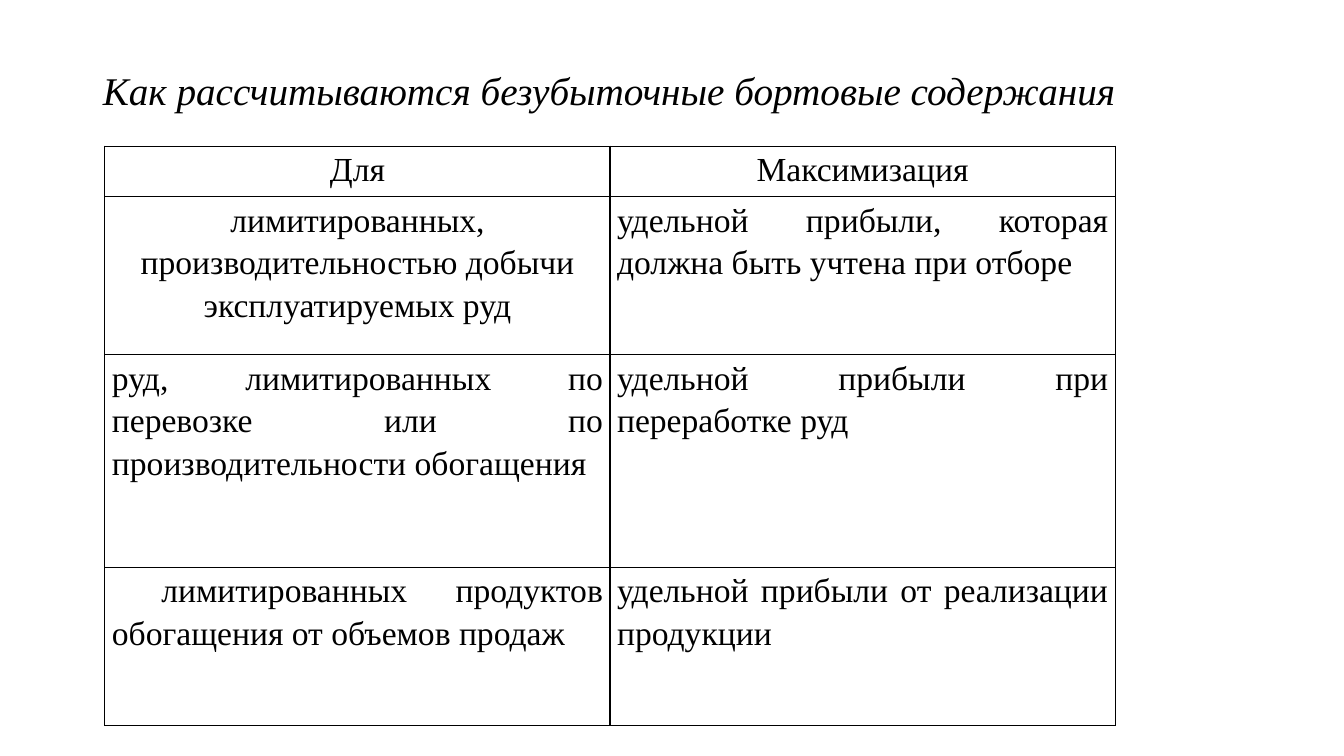
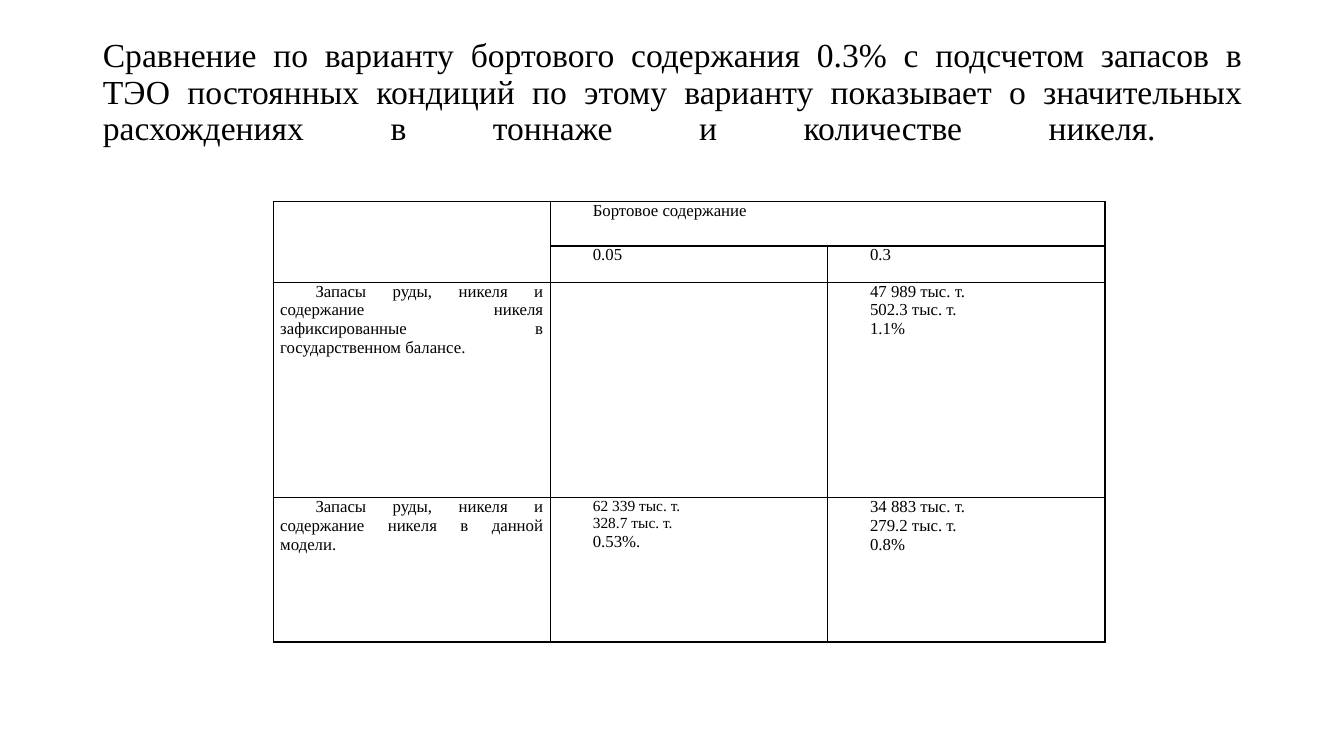
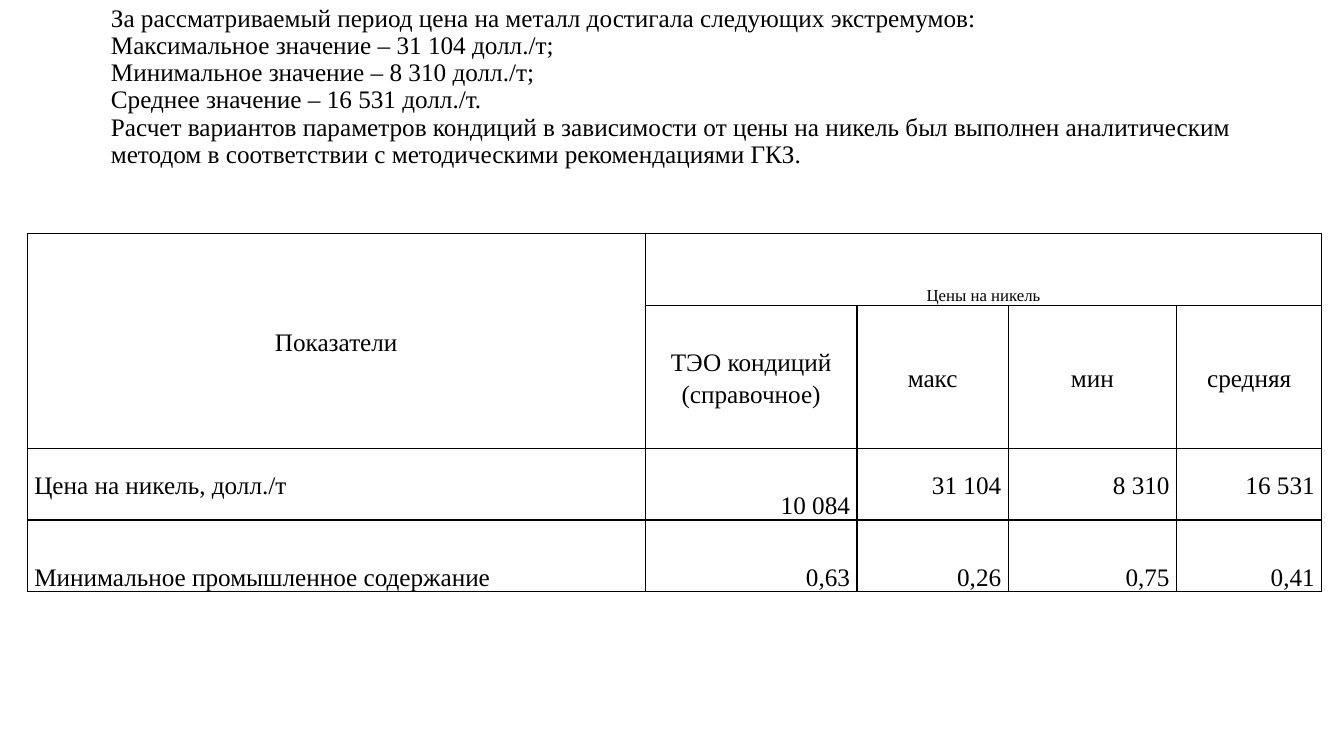
import copy
import dataclasses

import lxml.etree
import pptx
import pptx.dml.color
import pptx.enum.text
import pptx.oxml.ns
import pptx.util

Inches = pptx.util.Inches
Pt = pptx.util.Pt
Align = pptx.enum.text.PP_ALIGN
Anchor = pptx.enum.text.MSO_ANCHOR
qn = pptx.oxml.ns.qn


@dataclasses.dataclass(frozen=True)
class Theme:
    font: str = "Times New Roman"
    ink: str = "000000"
    border: float = 1
    cell_inset: float = 0.07
    title_inset: float = 0.05
    title_spacing: float = 0.9
    large: int = 28
    medium: int = 24
    normal: int = 18
    small: int = 12
    tiny: int = 11


@dataclasses.dataclass(frozen=True)
class Box:
    left: float
    top: float
    width: float
    height: float

    def lengths(self):
        return [Inches(value) for value in dataclasses.astuple(self)]


@dataclasses.dataclass(frozen=True)
class CellStyle:
    size: int
    align: Align = Align.JUSTIFY
    anchor: Anchor = Anchor.TOP
    line_spacing: float = 1.0
    space_after: float = 0
    indent: float = 0


THEME = Theme()
TITLE_BOX = Box(0.92, 0.4, 11.5, 1.45)


def format_runs(para, size, italic=False):
    for span in para.runs:
        span.font.name = THEME.font
        span.font.size = Pt(size)
        span.font.italic = italic
        span.font.color.rgb = pptx.dml.color.RGBColor.from_string(THEME.ink)


def format_breaks(para, size):
    """Give line breaks and the paragraph end the type size of the runs."""
    for line_break in para._p.findall(qn("a:br")):
        line_break.append(copy.deepcopy(para.runs[0]._r.rPr))
    lxml.etree.SubElement(para._p, qn("a:endParaRPr"), sz=str(size * 100))


def add_title(page, box, text, size, align=Align.LEFT, italic=False, lift=0):
    """Place the title; lift is extra room kept free under the text."""
    title = page.shapes.title
    title.left, title.top, title.width, title.height = box.lengths()
    frame = title.text_frame
    frame.word_wrap = True
    frame.auto_size = pptx.enum.text.MSO_AUTO_SIZE.NONE
    frame.vertical_anchor = Anchor.MIDDLE
    frame.margin_top = Inches(THEME.title_inset)
    frame.margin_bottom = Inches(THEME.title_inset + lift)
    para = frame.paragraphs[0]
    para.text = text
    para.alignment = align
    para.line_spacing = THEME.title_spacing
    format_runs(para, size, italic)
    format_breaks(para, size)


def draw_borders(cell):
    properties = cell._tc.get_or_add_tcPr()
    for side in ("a:lnL", "a:lnR", "a:lnT", "a:lnB"):
        line = lxml.etree.SubElement(properties, qn(side), w=str(Pt(THEME.border)))
        fill = lxml.etree.SubElement(line, qn("a:solidFill"))
        lxml.etree.SubElement(fill, qn("a:srgbClr"), val=THEME.ink)


def fill_cell(cell, text, style):
    draw_borders(cell)
    cell.fill.background()
    cell.margin_left = cell.margin_right = Inches(THEME.cell_inset)
    cell.margin_top = cell.margin_bottom = 0
    cell.vertical_anchor = style.anchor
    cell.text_frame.text = text
    for para in cell.text_frame.paragraphs:
        para.alignment = style.align
        para.line_spacing = style.line_spacing
        para.space_after = Pt(style.space_after)
        if style.indent:
            para._p.get_or_add_pPr().set("indent", str(Inches(style.indent)))
        format_runs(para, style.size)


def add_grid(page, box, columns, rows, texts, style_at, merges=()):
    """Add a ruled table; style_at(row, column) gives the style of a cell."""
    table = page.shapes.add_table(len(rows), len(columns), *box.lengths()).table
    table.first_row = table.horz_banding = False
    for column, width in zip(table.columns, columns):
        column.width = Inches(width)
    for row, height in zip(table.rows, rows):
        row.height = Inches(height)
    for r, row_texts in enumerate(texts):
        for c, text in enumerate(row_texts):
            fill_cell(table.cell(r, c), text, style_at(r, c))
    for first, last in merges:
        table.cell(*first).merge(table.cell(*last))
    return table


def build_cutoff_page(page):
    add_title(page, TITLE_BOX, "Как рассчитываются безубыточные бортовые содержания",
              THEME.large, italic=True, lift=0.4)
    body = CellStyle(THEME.medium, line_spacing=1.15, space_after=10)
    centred = dataclasses.replace(body, align=Align.CENTER)
    indented = dataclasses.replace(body, indent=0.49)
    special = {(0, 0): centred, (0, 1): centred, (1, 0): centred, (3, 0): indented}
    texts = [
        ["Для", "Максимизация"],
        ["лимитированных, производительностью добычи эксплуатируемых руд",
         "удельной прибыли, которая должна быть учтена при отборе"],
        ["руд, лимитированных по перевозке или по производительности обогащения",
         "удельной прибыли при переработке руд"],
        ["лимитированных продуктов обогащения от объемов продаж",
         "удельной прибыли от реализации продукции"],
    ]
    add_grid(page, Box(1.04, 1.45, 10.02, 5.75), [5.01] * 2, [0.5, 1.57, 2.11, 1.57],
             texts, lambda r, c: special.get((r, c), body))


def build_comparison_page(page):
    # The closing line break makes the justified last line fill the width.
    add_title(page, TITLE_BOX,
              "Сравнение по варианту бортового содержания 0.3% с подсчетом запасов в ТЭО "
              "постоянных кондиций по этому варианту показывает о значительных "
              "расхождениях в тоннаже и количестве никеля. \n",
              THEME.medium, align=Align.JUSTIFY)
    body = CellStyle(THEME.small, indent=0.35)
    texts = [
        ["", "Бортовое содержание", ""],
        ["", "0.05", "0.3"],
        ["Запасы руды, никеля и содержание никеля зафиксированные в "
         "государственном балансе.", "", "47 989 тыс. т.\n502.3 тыс. т.\n1.1%"],
        ["Запасы руды, никеля и содержание никеля в данной модели.",
         "62 339 тыс. т.\n328.7 тыс. т.\n0.53%.",
         "34 883 тыс. т.\n279.2 тыс. т.\n0.8%"],
    ]
    table = add_grid(page, Box(2.71, 2, 8.25, 4.37), [2.75] * 3,
                     [0.44, 0.36, 2.14, 1.43], texts, lambda r, c: body,
                     merges=[((0, 0), (1, 0)), ((0, 1), (0, 2))])
    for para in table.cell(3, 1).text_frame.paragraphs[:2]:
        format_runs(para, THEME.tiny)


def build_price_page(page):
    add_title(page, Box(1, 0.09, 11.58, 2.09),
              "За рассматриваемый период цена на металл достигала следующих экстремумов:\n"
              "Максимальное значение – 31 104 долл./т;\n"
              "Минимальное значение – 8 310 долл./т;\n"
              "Среднее значение – 16 531 долл./т.\n"
              "Расчет вариантов параметров кондиций в зависимости от цены на никель был "
              "выполнен аналитическим методом в соответствии с методическими "
              "рекомендациями ГКЗ.",
              THEME.normal, lift=0.54)
    texts = [
        ["Показатели", "Цены на никель", "", "", ""],
        ["", "ТЭО кондиций (справочное)", "макс", "мин", "средняя"],
        ["Цена на никель, долл./т", "10 084", "31 104", "8 310", "16 531"],
        ["Минимальное промышленное содержание", "0,63", "0,26", "0,75", "0,41"],
    ]

    def style_at(r, c):
        if r < 2:
            align = Align.CENTER
        else:
            align = Align.RIGHT if c else Align.LEFT
        price_group = r == 0 and c > 0
        at_bottom = price_group or r == 3 or (r, c) == (2, 1)
        return CellStyle(THEME.small if price_group else THEME.normal, align,
                         Anchor.BOTTOM if at_bottom else Anchor.MIDDLE,
                         line_spacing=1.15, space_after=10)

    add_grid(page, Box(0.27, 2.32, 12.84, 3.55), [6.13, 2.1, 1.5, 1.67, 1.44],
             [0.71, 1.42, 0.71, 0.71], texts, style_at,
             merges=[((0, 0), (1, 0)), ((0, 1), (0, 4))])


def main():
    deck = pptx.Presentation()
    deck.slide_width, deck.slide_height = Inches(13.33), Inches(7.5)
    title_only = deck.slide_layouts[5]
    for build in (build_cutoff_page, build_comparison_page, build_price_page):
        build(deck.slides.add_slide(title_only))
    deck.save("out.pptx")


if __name__ == "__main__":
    main()
